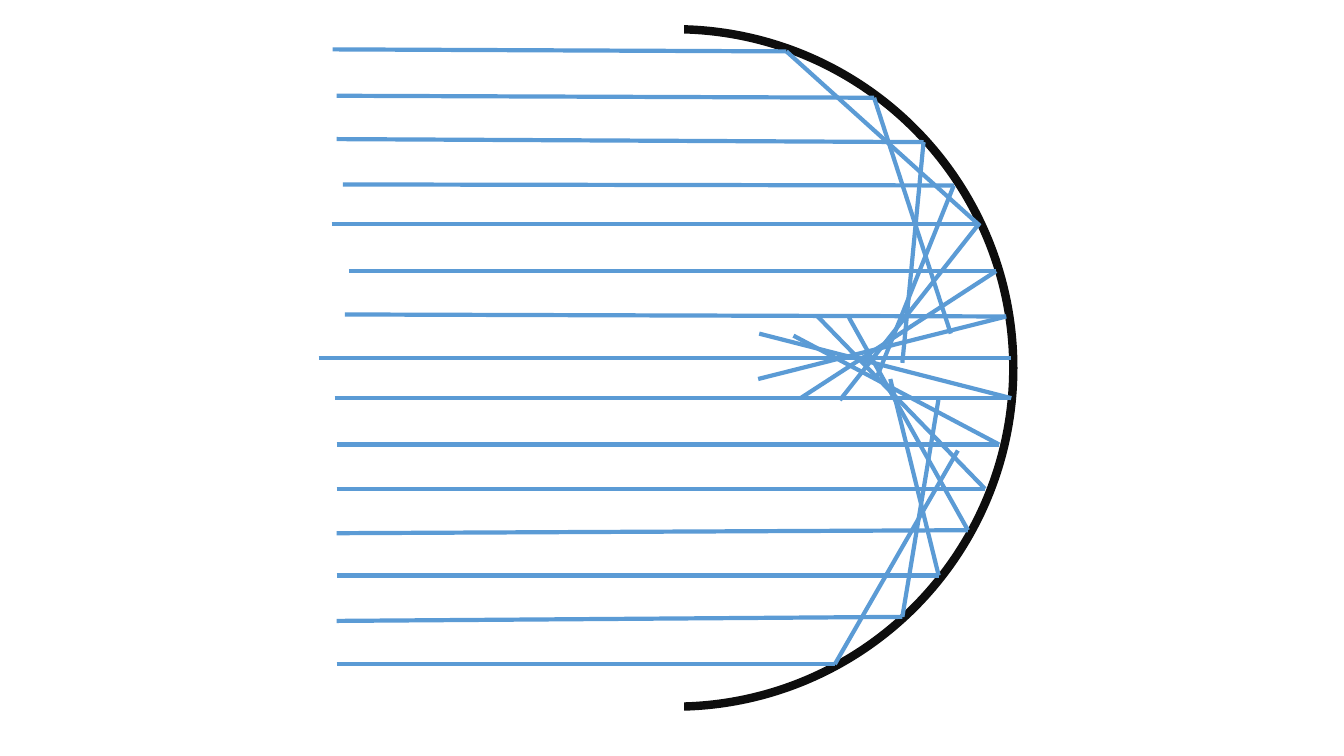
from itertools import pairwise

from lxml import etree
from pptx import Presentation
from pptx.dml.color import RGBColor
from pptx.enum import shapes
from pptx.oxml import ns
from pptx.util import Inches, Pt

BLACK = RGBColor(0x0D, 0x0D, 0x0D)
WHITE = RGBColor(0xFF, 0xFF, 0xFF)
BLUE = RGBColor(0x5B, 0x9B, 0xD5)

RAYS = [
    [(0.3, 0.49), (4.8, 0.51), (6.72, 2.24)],
    [(0.34, 0.95), (5.67, 0.97), (6.43, 3.31)],
    [(0.34, 1.38), (6.16, 1.41), (5.95, 3.6)],
    [(0.4, 1.83), (6.46, 1.84), (5.69, 3.76)],
    [(0.29, 2.22), (6.71, 2.22), (5.33, 3.97)],
    [(0.46, 2.69), (6.88, 2.69), (4.94, 3.95)],
    [(0.42, 3.12), (6.98, 3.14), (4.52, 3.76)],
    [(0.16, 3.55), (7.03, 3.55)],
    [(0.32, 3.95), (7.03, 3.95), (4.53, 3.31)],
    [(0.34, 4.41), (6.91, 4.41), (4.87, 3.33)],
    [(0.34, 4.85), (6.77, 4.85), (5.11, 3.14)],
    [(0.34, 5.29), (6.6, 5.26), (5.42, 3.15)],
    [(0.34, 5.71), (6.31, 5.71), (5.83, 3.76)],
    [(0.34, 6.16), (5.95, 6.12), (6.31, 3.95)],
    [(0.34, 6.59), (5.28, 6.59), (6.5, 4.47)],
]


def add_form(slide, kind, box, color, width):
    """Add a white shape with the given outline."""
    form = slide.shapes.add_shape(kind, *map(Inches, box))
    form.shadow.inherit = False
    form.fill.solid()
    form.fill.fore_color.rgb = WHITE
    form.line.color.rgb = color
    form.line.width = Pt(width)


def add_line(slide, start, end):
    """Add one straight piece of a light ray."""
    line = slide.shapes.add_connector(
        shapes.MSO_CONNECTOR.STRAIGHT, *map(Inches, start + end))
    line.line.color.rgb = BLUE
    line.line.width = Pt(3)
    etree.SubElement(line._element.spPr, ns.qn("a:effectLst"))


def add_mirror(slide, left, top):
    """Draw a round mirror as a circle with its left half covered."""
    kind = shapes.MSO_SHAPE
    add_form(slide, kind.OVAL, (left + 0.34, top + 0.29, 6.71, 6.72), BLACK, 6)
    add_form(slide, kind.RECTANGLE, (left, top + 0.14, 3.76, 7.17), WHITE, 3)


def add_rays(slide, left, top):
    """Draw each ray to the mirror and on past its focus."""
    for ray in RAYS:
        points = [(left + x, top + y) for x, y in ray]
        for start, end in pairwise(points):
            add_line(slide, start, end)


def main():
    """Build and save the slide."""
    deck = Presentation()
    deck.slide_width, deck.slide_height = Inches(13.33), Inches(7.5)
    slide = deck.slides.add_slide(deck.slide_layouts[6])
    add_mirror(slide, 3, 0)
    add_rays(slide, 3, 0)
    deck.save("out.pptx")


if __name__ == "__main__":
    main()
